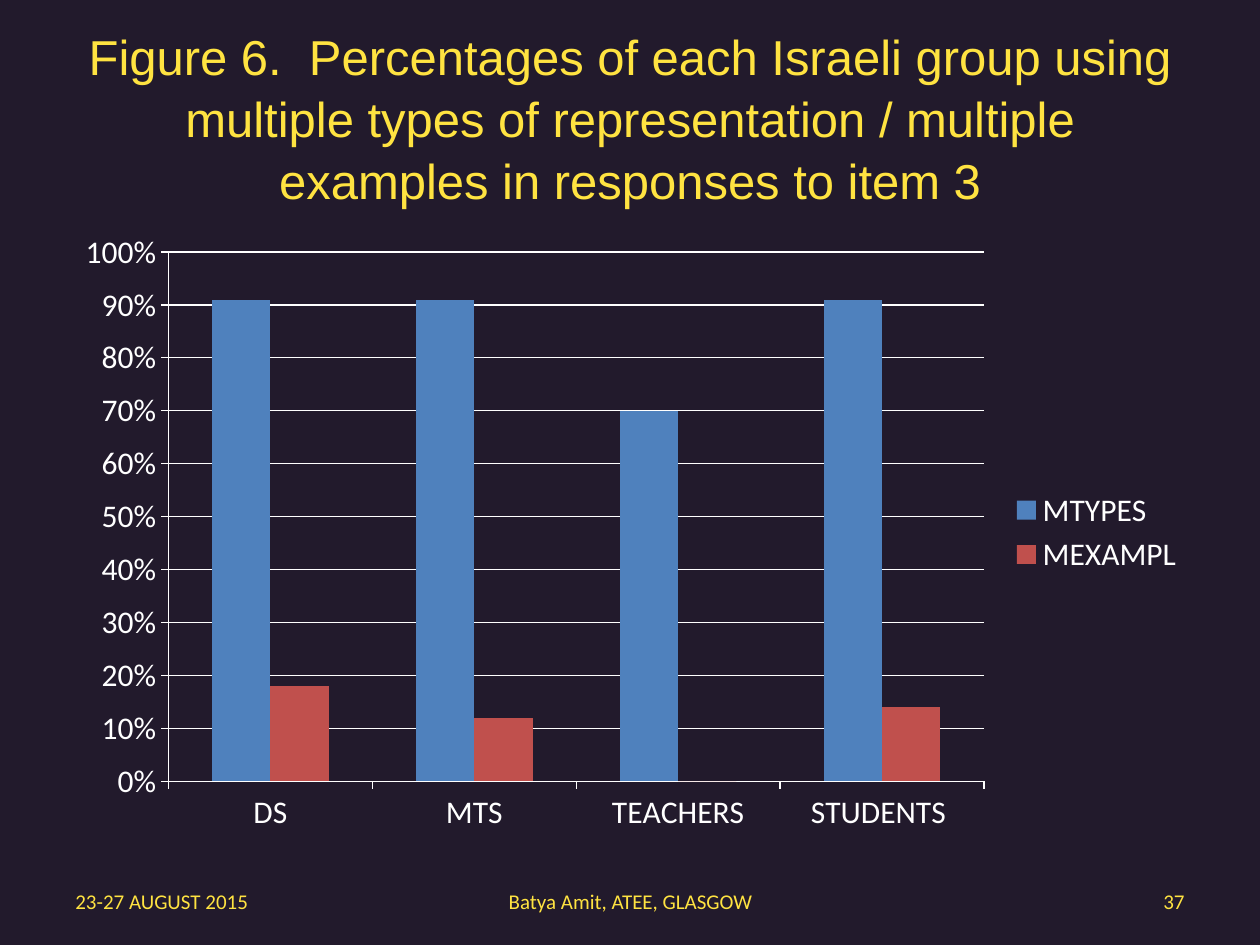
from dataclasses import dataclass

from pptx import Presentation
from pptx.chart.data import CategoryChartData
from pptx.dml.color import RGBColor
from pptx.enum.chart import XL_CHART_TYPE, XL_LEGEND_POSITION, XL_TICK_MARK
from pptx.enum.text import MSO_ANCHOR, PP_ALIGN
from pptx.util import Inches, Pt

LEFT, CENTER, RIGHT = PP_ALIGN.LEFT, PP_ALIGN.CENTER, PP_ALIGN.RIGHT
MIDDLE = MSO_ANCHOR.MIDDLE
CLUSTERED = XL_CHART_TYPE.COLUMN_CLUSTERED
LEGEND_RIGHT = XL_LEGEND_POSITION.RIGHT
TICK_OUT = XL_TICK_MARK.OUTSIDE


@dataclass(frozen=True)
class Theme:
    background: RGBColor = RGBColor(0x22, 0x1A, 0x2C)
    accent: RGBColor = RGBColor(0xFF, 0xE3, 0x41)
    chart_text: RGBColor = RGBColor(0xFF, 0xFF, 0xFF)
    title_font: str = "Arial"
    body_font: str = "Calibri"
    title_size: int = 28
    chart_size: int = 18
    footer_size: int = 12


@dataclass(frozen=True)
class Series:
    name: str
    values: tuple[float, ...]
    color: RGBColor


@dataclass(frozen=True)
class FooterItem:
    text: str
    left: float
    width: float
    align: PP_ALIGN


THEME = Theme()
CATEGORIES = ("DS", "MTS", "TEACHERS", "STUDENTS ")
SERIES = (
    Series("MTYPES", (0.91, 0.91, 0.7, 0.91), RGBColor(0x4F, 0x81, 0xBD)),
    Series("MEXAMPL", (0.18, 0.12, 0, 0.14), RGBColor(0xC0, 0x50, 0x4D)),
)
FOOTER = (
    FooterItem("23-27 AUGUST 2015", 0.5, 2.33, LEFT),
    FooterItem("Batya Amit, ATEE, GLASGOW", 3.42, 3.17, CENTER),
    FooterItem("37", 7.17, 2.33, RIGHT),
)


def add_text(slide, text: str, left: float, top: float, width: float, height: float, *,
             size: int, font: str, align: PP_ALIGN, spacing: float = 1.0) -> None:
    sp = slide.shapes.add_textbox(Inches(left), Inches(top), Inches(width), Inches(height))
    tf = sp.text_frame
    tf.word_wrap = True
    tf.vertical_anchor = MIDDLE
    p = tf.paragraphs[0]
    p.alignment = align
    p.line_spacing = spacing
    r = p.add_run()
    r.text = text
    r.font.size = Pt(size)
    r.font.name = font
    r.font.color.rgb = THEME.accent


def style_line(line) -> None:
    line.color.rgb = THEME.chart_text
    line.width = Pt(0.75)


def add_percentage_chart(slide) -> None:
    data = CategoryChartData(number_format="0%")
    data.categories = CATEGORIES
    for series in SERIES:
        data.add_series(series.name, series.values)
    chart = slide.shapes.add_chart(
        CLUSTERED, Inches(0.5), Inches(1.75), Inches(9), Inches(4.95), data).chart
    chart.has_title = False
    chart.font.size = Pt(THEME.chart_size)
    chart.font.name = THEME.body_font
    chart.font.color.rgb = THEME.chart_text
    chart.has_legend = True
    chart.legend.position = LEGEND_RIGHT
    chart.legend.include_in_layout = False

    plot = chart.plots[0]
    plot.gap_width = 150
    plot.overlap = 0
    plot.vary_by_categories = False
    for bars, series in zip(plot.series, SERIES):
        bars.format.fill.solid()
        bars.format.fill.fore_color.rgb = series.color

    for axis in (chart.category_axis, chart.value_axis):
        axis.major_tick_mark = TICK_OUT
        style_line(axis.format.line)
    values = chart.value_axis
    values.minimum_scale, values.maximum_scale, values.major_unit = 0, 1, 0.1
    values.tick_labels.number_format = "0%"
    values.tick_labels.number_format_is_linked = False
    values.has_major_gridlines = True
    style_line(values.major_gridlines.format.line)


def main() -> None:
    prs = Presentation()
    prs.slide_width, prs.slide_height = Inches(10), Inches(7.5)
    s = prs.slides.add_slide(prs.slide_layouts[6])
    s.background.fill.solid()
    s.background.fill.fore_color.rgb = THEME.background
    add_text(s, "Figure 6.  Percentages of each Israeli group using multiple types of "
             "representation / multiple examples in responses to item 3",
             0.5, 0.3, 9, 1.25, size=THEME.title_size, font=THEME.title_font,
             align=CENTER, spacing=1.05)
    add_percentage_chart(s)
    for item in FOOTER:
        add_text(s, item.text, item.left, 6.95, item.width, 0.4,
                 size=THEME.footer_size, font=THEME.body_font, align=item.align)
    prs.save("out.pptx")


if __name__ == "__main__":
    main()
